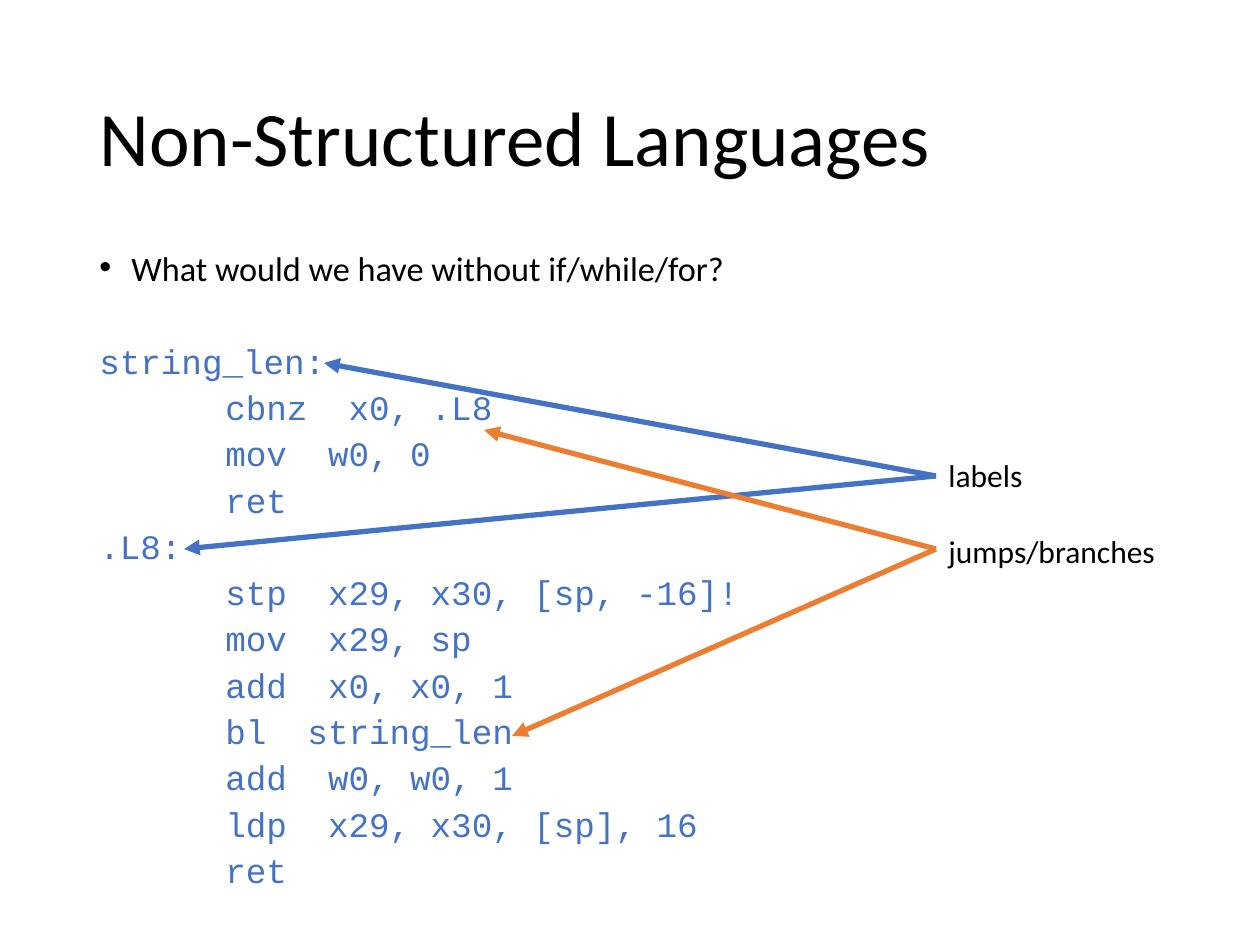
from dataclasses import dataclass

from lxml import etree
from pptx import Presentation
from pptx.dml.color import RGBColor
from pptx.enum.shapes import MSO_CONNECTOR
from pptx.enum.text import MSO_ANCHOR
from pptx.oxml.ns import qn
from pptx.util import Pt

STRAIGHT = MSO_CONNECTOR.STRAIGHT
TOP, MIDDLE = MSO_ANCHOR.TOP, MSO_ANCHOR.MIDDLE
EMU_PER_PX = 914400 / 126


def px(length):
    return round(length * EMU_PER_PX)


@dataclass(frozen=True)
class Theme:
    text: RGBColor = RGBColor.from_string("000000")
    label: RGBColor = RGBColor.from_string("4472C4")
    jump: RGBColor = RGBColor.from_string("ED7D31")
    prose_font: str = "Calibri"
    code_font: str = "Courier New"
    title_size: float = 44
    body_size: float = 19.6
    note_size: float = 18
    arrow_width: float = 3


class SlideBuilder:
    def __init__(self, deck, theme):
        self.theme = theme
        self.slide = deck.slides.add_slide(deck.slide_layouts[6])

    def text_box(self, left, top, width, height, anchor=TOP, wrap=True):
        box = self.slide.shapes.add_textbox(px(left), px(top), px(width), px(height))
        frame = box.text_frame
        frame.word_wrap = wrap
        frame.vertical_anchor = anchor
        return frame

    def paragraph(self, frame, text, size, font=None, color=None,
                  line_spacing=1.0, before=0, margin=0, bullet=False):
        first = frame.paragraphs[0]
        para = frame.add_paragraph() if first.runs else first
        para.line_spacing = line_spacing
        para.space_before = Pt(before)
        properties = para._p.get_or_add_pPr()
        properties.set("marL", str(px(margin)))
        properties.set("indent", str(-px(margin) if bullet else 0))
        if bullet:
            etree.SubElement(properties, qn("a:buFont"), typeface="Arial")
            etree.SubElement(properties, qn("a:buChar"), char="•")
        span = para.add_run()
        span.text = text
        span.font.size = Pt(size)
        span.font.name = font or self.theme.prose_font
        span.font.color.rgb = color or self.theme.text

    def arrow(self, start, end, color):
        line = self.slide.shapes.add_connector(STRAIGHT, *map(px, start + end))
        line.line.color.rgb = color
        line.line.width = Pt(self.theme.arrow_width)
        etree.SubElement(line.line._get_or_add_ln(), qn("a:tailEnd"), type="triangle")
        etree.SubElement(line._element.spPr, qn("a:effectLst"))


# Each label with the instructions below it
ROUTINES = {
    "string_len:": ["cbnz  x0, .L8", "mov  w0, 0", "ret"],
    ".L8:": [
        "stp  x29, x30, [sp, -16]!",
        "mov  x29, sp",
        "add  x0, x0, 1",
        "bl  string_len",
        "add  w0, w0, 1",
        "ldp  x29, x30, [sp], 16",
        "ret",
    ],
}


def main():
    theme = Theme()
    deck = Presentation()
    deck.slide_width, deck.slide_height = px(1260), px(945)
    page = SlideBuilder(deck, theme)

    title = page.text_box(87, 50, 1086, 183, anchor=MIDDLE)
    page.paragraph(title, "Non-Structured Languages", theme.title_size, line_spacing=0.9)

    body = page.text_box(87, 252, 1086, 673)
    page.paragraph(body, "What would we have without if/while/for?", theme.body_size,
                   line_spacing=0.7, before=10, margin=32, bullet=True)
    before = 36.7  # sets the code apart from the question
    for label, instructions in ROUTINES.items():
        for line in [label, *instructions]:
            page.paragraph(body, line, theme.body_size, theme.code_font, theme.label,
                           line_spacing=0.7, before=before,
                           margin=0 if line == label else 126)
            before = 10

    notes = page.text_box(936, 450, 234, 127, wrap=False)
    page.paragraph(notes, "labels", theme.note_size)
    page.paragraph(notes, "jumps/branches", theme.note_size, before=22)

    labels_note, jumps_note = (936, 476), (936, 549)
    for target in [(184, 549), (324, 363)]:
        page.arrow(labels_note, target, theme.label)
    for target in [(484, 430), (512, 736)]:
        page.arrow(jumps_note, target, theme.jump)

    deck.save("out.pptx")


if __name__ == "__main__":
    main()
